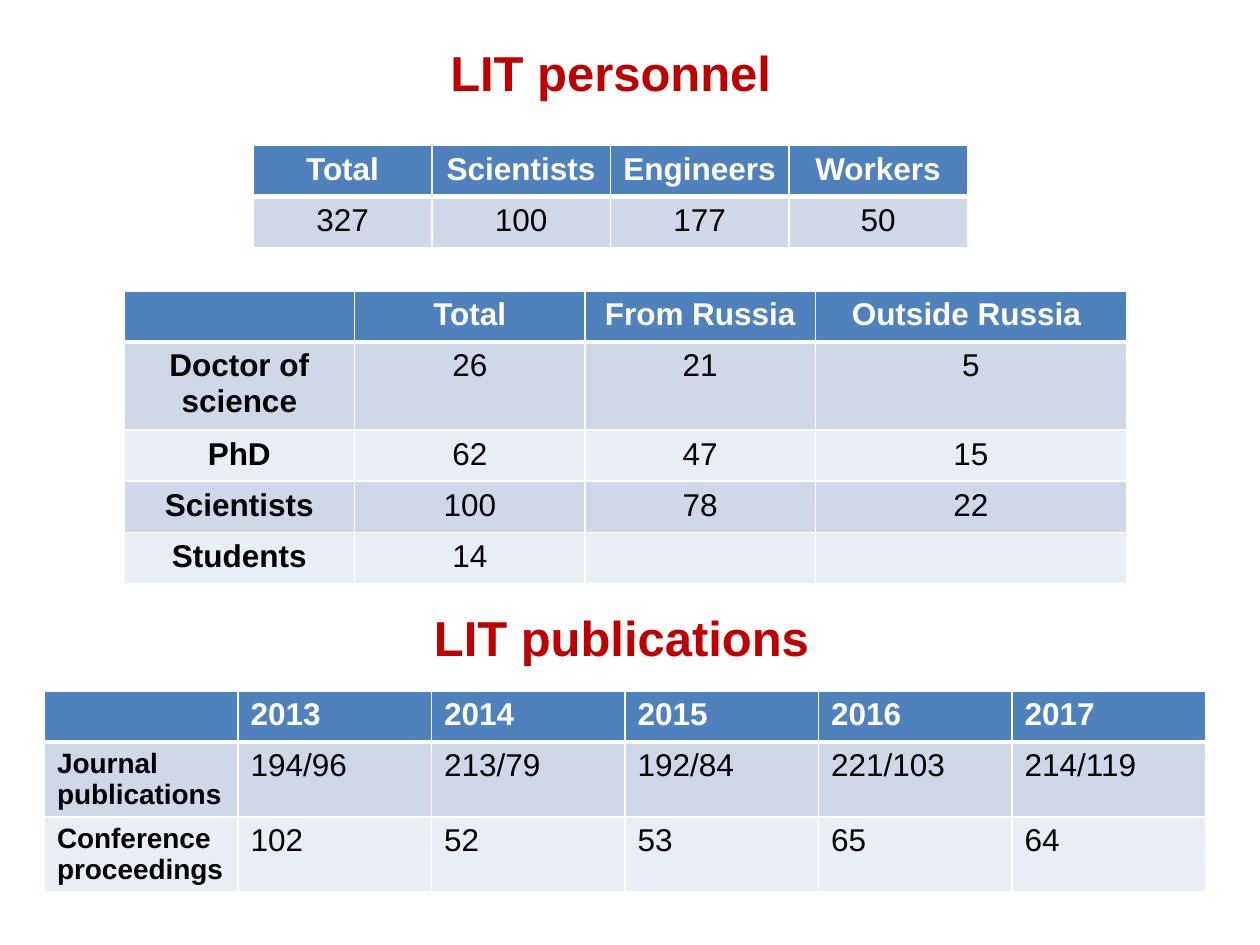
from dataclasses import dataclass

from lxml.etree import SubElement
from pptx import Presentation
from pptx.dml.color import RGBColor
from pptx.enum.text import MSO_ANCHOR, MSO_AUTO_SIZE, PP_ALIGN
from pptx.oxml.ns import qn
from pptx.util import Pt


@dataclass(frozen=True)
class Theme:
    font: str = "Arial"
    heading: str = "C00000"
    header: str = "4F81BD"
    bands: tuple = ("D0D8E8", "E9EDF4")
    white: str = "FFFFFF"
    black: str = "000000"
    heading_size: int = 28
    table_size: int = 18
    small_size: int = 16
    line: int = 1
    header_line: int = 3


THEME = Theme()


def add_text(text_frame, text, size, color, bold, alignment):
    paragraph = text_frame.paragraphs[0]
    paragraph.alignment = alignment
    run = paragraph.add_run()
    run.text = text
    run.font.name = THEME.font
    run.font.size = Pt(size)
    run.font.bold = bold
    run.font.color.rgb = RGBColor.from_string(color)


def format_heading(shape, text, left, top, width):
    shape.left, shape.top, shape.width, shape.height = (
        Pt(left), Pt(top), Pt(width), Pt(41))
    text_frame = shape.text_frame
    text_frame.word_wrap = False
    text_frame.auto_size = MSO_AUTO_SIZE.NONE
    text_frame.vertical_anchor = MSO_ANCHOR.TOP
    add_text(text_frame, text, THEME.heading_size, THEME.heading, True, PP_ALIGN.CENTER)


def style_cell(cell, fill, top_line, bottom_line):
    properties = cell._tc.get_or_add_tcPr()
    widths = {"a:lnL": THEME.line, "a:lnR": THEME.line,
              "a:lnT": top_line, "a:lnB": bottom_line}
    for tag, width in widths.items():
        line = SubElement(properties, qn(tag), w=str(Pt(width)))
        solid = SubElement(line, qn("a:solidFill"))
        SubElement(solid, qn("a:srgbClr"), val=THEME.white)
    cell.fill.solid()
    cell.fill.fore_color.rgb = RGBColor.from_string(fill)


def add_data_table(slide, rows, left, top, widths, heights,
                   alignment=PP_ALIGN.CENTER, label_size=None):
    frame = slide.shapes.add_table(
        len(rows), len(widths), Pt(left), Pt(top), Pt(sum(widths)), Pt(sum(heights)))
    table = frame.table
    for column, width in zip(table.columns, widths):
        column.width = Pt(width)
    for row_index, values in enumerate(rows):
        table.rows[row_index].height = Pt(heights[row_index])
        is_header = row_index == 0
        fill = THEME.header if is_header else THEME.bands[(row_index - 1) % 2]
        color = THEME.white if is_header else THEME.black
        top_line = THEME.header_line if row_index == 1 else THEME.line
        bottom_line = THEME.header_line if is_header else THEME.line
        for column_index, value in enumerate(values):
            cell = table.cell(row_index, column_index)
            style_cell(cell, fill, top_line, bottom_line)
            is_label = label_size is not None and column_index == 0
            size = label_size if is_label else THEME.table_size
            if value:
                add_text(cell.text_frame, value, size, color,
                         is_header or is_label, alignment)


def main():
    presentation = Presentation()
    presentation.slide_width, presentation.slide_height = Pt(720), Pt(540)
    slide = presentation.slides.add_slide(presentation.slide_layouts[5])

    publications = [
        ["", "2013", "2014", "2015", "2016", "2017"],
        ["Journal publications", "194/96", "213/79", "192/84", "221/103", "214/119"],
        ["Conference proceedings", "102", "52", "53", "65", "64"],
    ]
    degrees = [
        ["", "Total", "From Russia", "Outside Russia "],
        ["Doctor of science", "26", "21", "5"],
        ["PhD", "62", "47", "15"],
        ["Scientists", "100", "78", "22"],
        ["Students", "14", "", ""],
    ]
    personnel = [
        ["Total", "Scientists", "Engineers", "Workers"],
        ["327", "100", "177", "50"],
    ]
    row = 29.2

    add_data_table(slide, publications, 25.4, 394.8, [110.6] * 6, [row, 42.6, 42.6],
                   PP_ALIGN.LEFT, THEME.small_size)
    format_heading(slide.shapes.add_textbox(0, 0, 0, 0),
                   "LIT publications", 239.2, 343.4, 232)
    add_data_table(slide, degrees, 70.9, 166.2, [131.7] * 3 + [177.6],
                   [row, 50.4] + [row] * 3, label_size=THEME.table_size)
    format_heading(slide.shapes.title, "LIT personnel", 249, 20.9, 200)
    add_data_table(slide, personnel, 144.8, 83.2, [102] * 4, [row] * 2)

    presentation.save("out.pptx")


if __name__ == "__main__":
    main()
